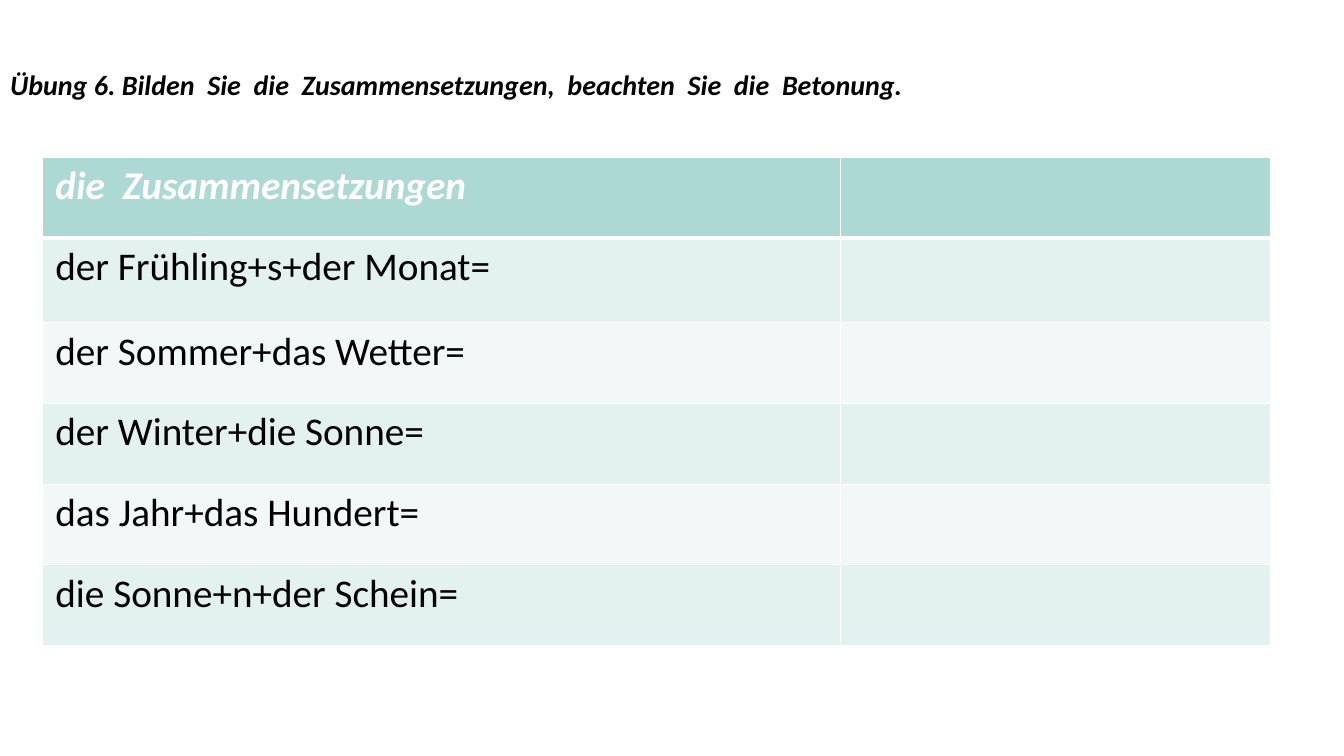
from lxml.etree import SubElement
from pptx import Presentation
from pptx.dml.color import RGBColor
from pptx.enum.text import MSO_ANCHOR, MSO_AUTO_SIZE, PP_ALIGN
from pptx.oxml.ns import qn
from pptx.util import Pt

COLORS = {
    "ink": "000000",
    "white": "FFFFFF",
    "header": "ADD9D4",
    "odd": "E3F1EF",
    "even": "F1F8F7",
}
TITLE = "Übung 6. Bilden  Sie  die  Zusammensetzungen,  beachten  Sie  die  Betonung."
HEADING = "die  Zusammensetzungen"
COMPOUNDS = [
    "der Frühling+s+der Monat=",
    "der Sommer+das Wetter=",
    "der Winter+die Sonne=",
    "das Jahr+das Hundert=",
    "die Sonne+n+der Schein=",
]
COLUMN_WIDTHS = [570.24, 307.44]
ROW_HEIGHTS = [57.6, 60.5, 57.6, 57.6, 57.6, 57.6]


class SlideBuilder:
    font_name = "Calibri"

    def __init__(self, slide):
        self.slide = slide

    def style(self, paragraph, size, color, emphasis):
        for span in paragraph.runs:
            span.font.name = self.font_name
            span.font.size = Pt(size)
            span.font.bold = emphasis
            span.font.italic = emphasis
            span.font.color.rgb = RGBColor.from_string(COLORS[color])

    def title(self, text, left, top, width, height):
        box = self.slide.shapes.title
        box.left, box.top, box.width, box.height = map(Pt, (left, top, width, height))
        frame = box.text_frame
        frame.text = text
        frame.word_wrap = True
        frame.auto_size = MSO_AUTO_SIZE.NONE
        frame.vertical_anchor = MSO_ANCHOR.MIDDLE
        para = frame.paragraphs[0]
        para.alignment = PP_ALIGN.LEFT
        para.line_spacing = 0.9
        self.style(para, 20, "ink", True)

    def borders(self, cell, bottom):
        properties = cell._tc.get_or_add_tcPr()
        for side, width in (("L", 1), ("R", 1), ("T", 1), ("B", bottom)):
            line = SubElement(properties, qn(f"a:ln{side}"), w=str(Pt(width)))
            fill = SubElement(line, qn("a:solidFill"))
            SubElement(fill, qn("a:srgbClr"), val=COLORS["white"])

    def cell(self, cell, text, fill, color, header):
        self.borders(cell, 3 if header else 1)
        cell.fill.solid()
        cell.fill.fore_color.rgb = RGBColor.from_string(COLORS[fill])
        cell.margin_left = cell.margin_right = Pt(9.36)
        cell.margin_top = cell.margin_bottom = Pt(3.6)
        if text:
            cell.text_frame.text = text
            self.style(cell.text_frame.paragraphs[0], 28, color, header)

    def table(self, heading, entries, left, top):
        rows = [heading, *entries]
        table = self.slide.shapes.add_table(
            len(rows), len(COLUMN_WIDTHS), Pt(left), Pt(top),
            Pt(sum(COLUMN_WIDTHS)), Pt(sum(ROW_HEIGHTS)),
        ).table
        table.horz_banding = False
        for column, width in zip(table.columns, COLUMN_WIDTHS):
            column.width = Pt(width)
        for index, (text, height) in enumerate(zip(rows, ROW_HEIGHTS)):
            header = index == 0
            fill = "header" if header else "odd" if index % 2 else "even"
            color = "white" if header else "ink"
            table.rows[index].height = Pt(height)
            self.cell(table.cell(index, 0), text, fill, color, header)
            self.cell(table.cell(index, 1), "", fill, color, header)


def main():
    deck = Presentation()
    deck.slide_width, deck.slide_height = Pt(960), Pt(540)
    page = SlideBuilder(deck.slides.add_slide(deck.slide_layouts[5]))
    page.title(TITLE, 0, 33.84, 864, 56.16)
    page.table(HEADING, COMPOUNDS, 30.24, 112.5)
    deck.save("out.pptx")


if __name__ == "__main__":
    main()
